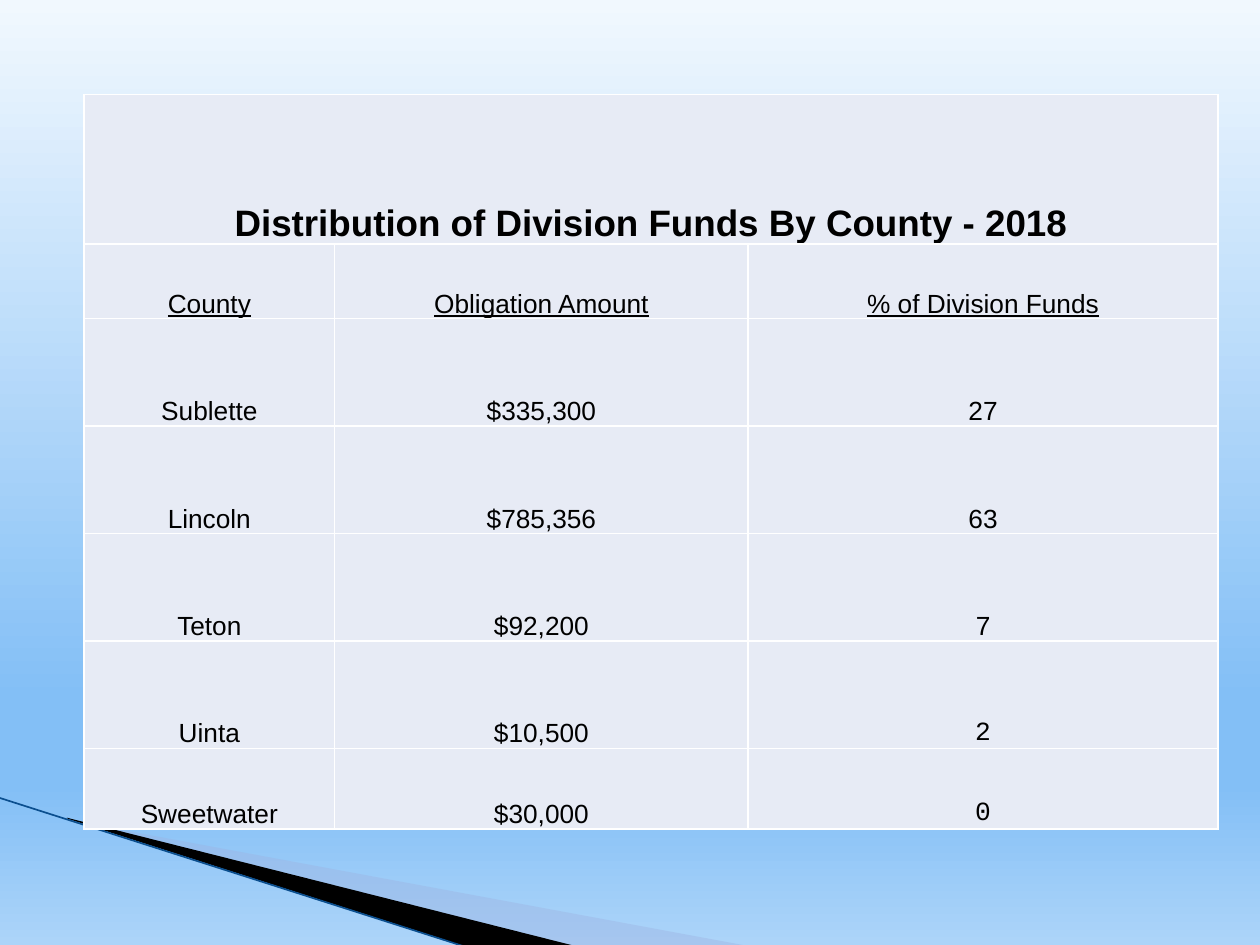
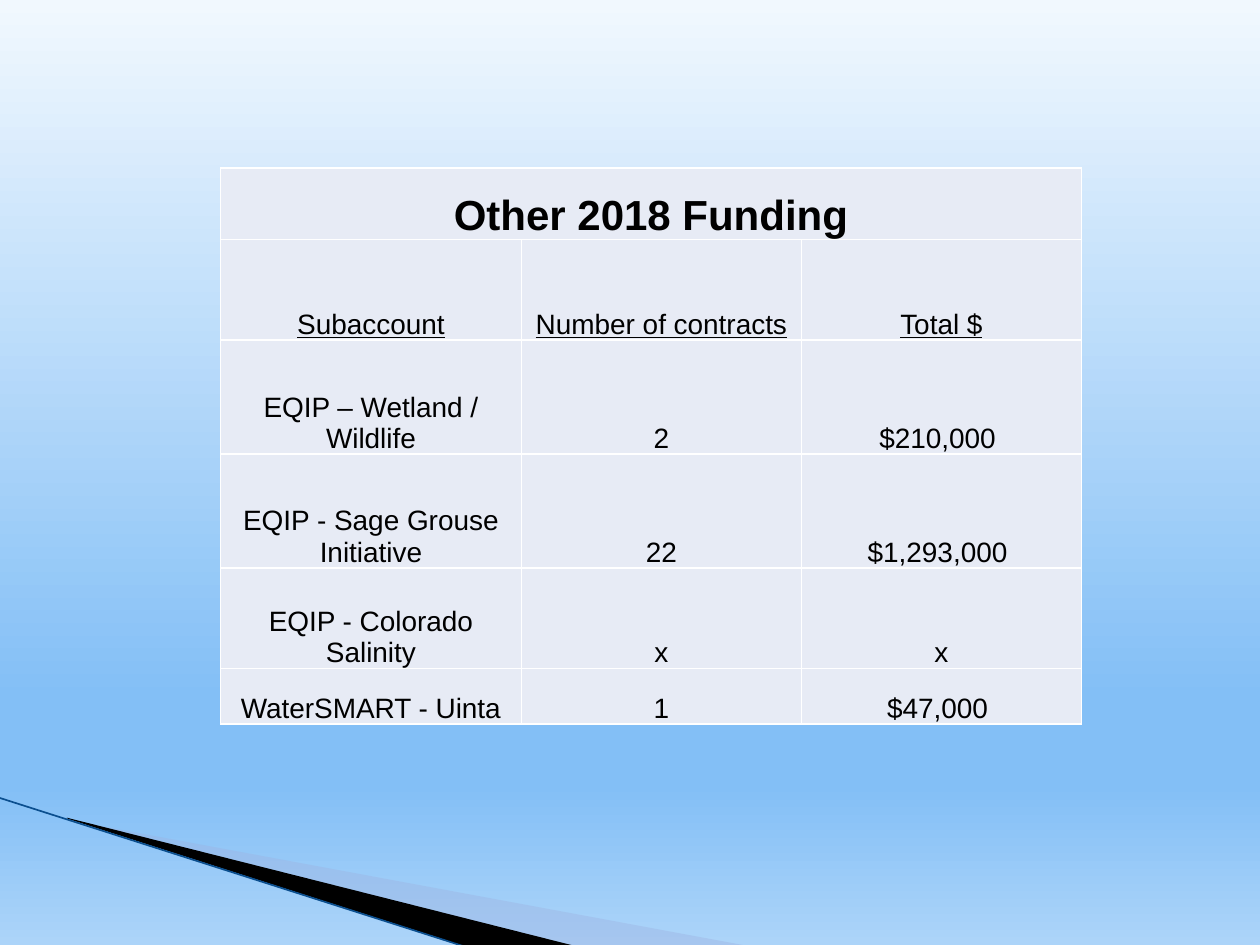
from lxml import etree
from pptx import Presentation
from pptx.dml.color import RGBColor
from pptx.enum import shapes, text
from pptx.oxml.ns import qn
from pptx.util import Pt

WHITE = RGBColor(0xFF, 0xFF, 0xFF)
BLACK = RGBColor(0, 0, 0)
CELL = RGBColor(0xE7, 0xEB, 0xF5)
HAZE = RGBColor(0x9D, 0xB2, 0xE1)
EDGE = RGBColor(0x0B, 0x4F, 0x8F)
SKY = [(0, RGBColor(0xF1, 0xF8, 0xFE)), (74, RGBColor(0x83, 0xBF, 0xF6)),
       (83, RGBColor(0x83, 0xBF, 0xF6)), (100, RGBColor(0xAC, 0xD4, 0xF9))]
SANS, MONO = "Arial", "Courier New"


def tint(parent, color):
    return etree.SubElement(parent, qn("a:srgbClr"), val=str(color))


class Deck:
    def __init__(self):
        self.prs = Presentation()
        self.prs.slide_width, self.prs.slide_height = Pt(720), Pt(540)
        self.slide = None
        self.sky()

    def sky(self):
        """Give the master its four-stop vertical gradient."""
        master = self.prs.slide_master
        fill = master.background.fill
        fill.gradient()
        fill.gradient_angle = 270
        stops = master.element.find(".//" + qn("a:gsLst"))
        for stop in list(stops):
            stops.remove(stop)
        for pos, color in SKY:
            tint(etree.SubElement(stops, qn("a:gs"), pos=str(pos * 1000)), color)

    def page(self):
        """Start a slide with the swoosh at its lower left."""
        self.slide = self.prs.slides.add_slide(self.prs.slide_layouts[6])
        self.wedge([(39.6, 468.7), (428.4, 540.7), (328.3, 540.7), (39.6, 468)], HAZE, 40)
        self.wedge([(38.2, 467.3), (329, 540.7), (267.8, 541.4), (38.9, 468)], BLACK)
        self.line((-0.7, 455.8), (267.1, 541.4))

    def wedge(self, points, color, alpha=100):
        first, *rest = [(Pt(x), Pt(y)) for x, y in points]
        form = self.slide.shapes.build_freeform(*first)
        form.add_line_segments(rest)
        shape = form.convert_to_shape()
        shape.shadow.inherit = False
        shape.line.fill.background()
        shape.fill.solid()
        shape.fill.fore_color.rgb = color
        if alpha < 100:
            clr = shape.element.spPr.find(".//" + qn("a:srgbClr"))
            etree.SubElement(clr, qn("a:alpha"), val=str(alpha * 1000))

    def line(self, start, end):
        line = self.slide.shapes.add_connector(
            shapes.MSO_CONNECTOR.STRAIGHT, *map(Pt, start + end))
        line.line.color.rgb = EDGE
        line.line.width = Pt(0.95)
        etree.SubElement(line.element.spPr, qn("a:effectLst"))

    def cell(self, cell, words, size, bold=False, under=False, face=SANS):
        props = cell._tc.get_or_add_tcPr()
        for side in "LRTB":
            edge = etree.SubElement(props, qn("a:ln" + side), w=str(Pt(1)))
            tint(etree.SubElement(edge, qn("a:solidFill")), WHITE)
        cell.fill.solid()
        cell.fill.fore_color.rgb = CELL
        cell.margin_left = cell.margin_right = cell.margin_top = Pt(0.7)
        cell.margin_bottom = 0
        cell.vertical_anchor = text.MSO_ANCHOR.BOTTOM
        para = cell.text_frame.paragraphs[0]
        para.alignment = text.PP_ALIGN.CENTER
        para.font.size = Pt(size)
        if words:
            run = para.add_run()
            run.text = words
            font = run.font
            font.name, font.size, font.bold, font.underline = face, Pt(size), bold, under
            font.color.rgb = BLACK

    def table(self, left, top, cols, rows, title, big, size, data, mono=()):
        """Draw a title row over data; mono lists the rows whose last cell is monospaced."""
        frame = self.slide.shapes.add_table(
            len(rows), len(cols), Pt(left), Pt(top), Pt(sum(cols)), Pt(sum(rows)))
        grid = frame.table
        grid.first_row = grid.horz_banding = False
        for col, width in zip(grid.columns, cols):
            col.width = Pt(width)
        for row, height in zip(grid.rows, rows):
            row.height = Pt(height)
        for c in range(len(cols)):
            self.cell(grid.cell(0, c), "" if c else title, big, bold=True)
        grid.cell(0, 0).merge(grid.cell(0, len(cols) - 1))
        for r, line in enumerate(data, 1):
            for c, words in enumerate(line):
                last = c == len(cols) - 1
                face = MONO if last and line[0] in mono else SANS
                self.cell(grid.cell(r, c), words, size, under=r == 1, face=face)


def main():
    deck = Deck()
    deck.page()
    deck.table(
        48, 54, [143.3, 236.2, 268.6], [85.5, 42.6] + [61.4] * 4 + [46],
        "Distribution of Division Funds By County - 2018", 21, 15,
        [("County", "Obligation Amount", "% of Division Funds"),
         ("Sublette", "$335,300", "27"),
         ("Lincoln", "$785,356", "63"),
         ("Teton", "$92,200", "7"),
         ("Uinta", "$10,500", "2"),
         ("Sweetwater", "$30,000", "0")],
        mono=("Uinta", "Sweetwater"))
    deck.page()
    deck.table(
        126, 96, [172, 160, 160], [41, 57.4, 65.1, 65.1, 57.4, 31.8],
        "Other 2018 Funding", 24, 16,
        [("Subaccount", "Number of contracts", "Total $"),
         ("EQIP – Wetland / Wildlife", "2", "$210,000 "),
         ("EQIP - Sage Grouse Initiative", "22", "$1,293,000 "),
         ("EQIP - Colorado Salinity", "x", "x"),
         ("WaterSMART - Uinta", "1", "$47,000 ")])
    deck.prs.save("out.pptx")


if __name__ == "__main__":
    main()
